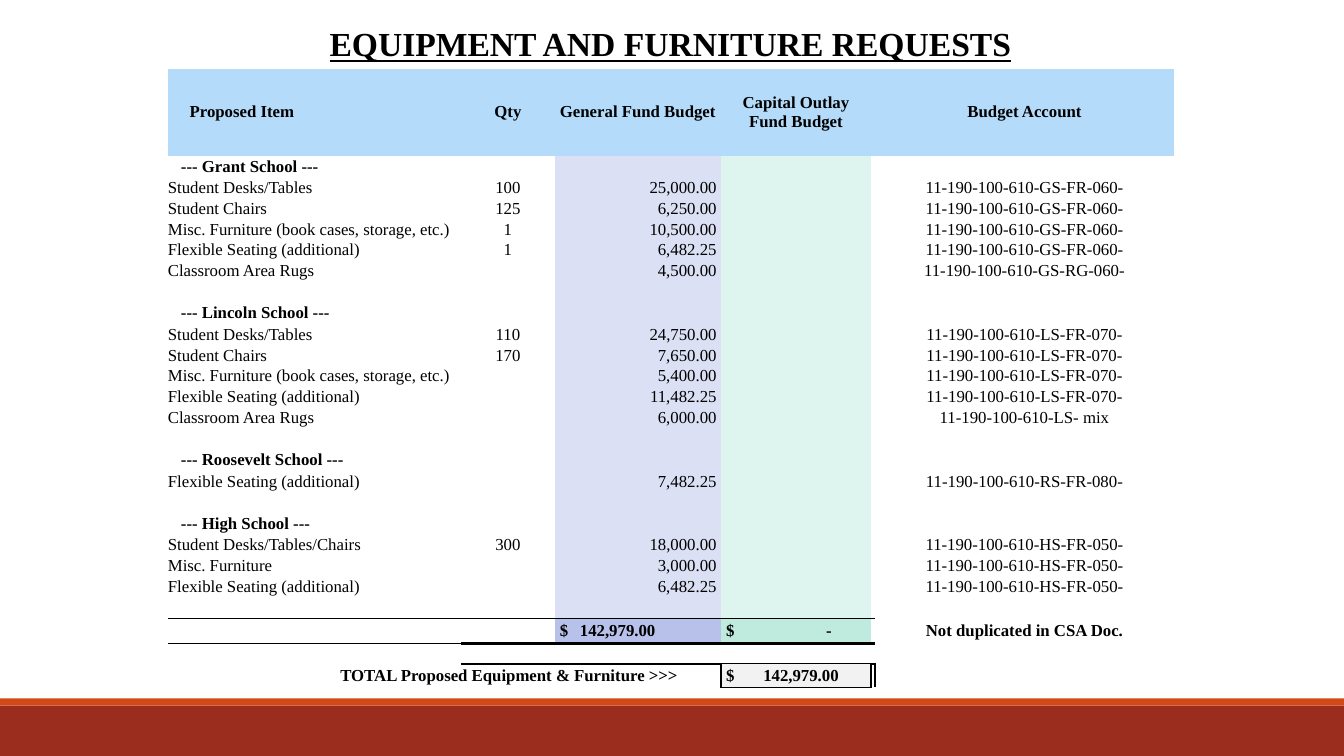
from lxml import etree
from pptx import Presentation
from pptx.dml.color import RGBColor
from pptx.enum.shapes import MSO_SHAPE
from pptx.enum.text import MSO_ANCHOR, MSO_AUTO_SIZE, PP_ALIGN
from pptx.oxml.ns import qn
from pptx.util import Cm, Pt

LEFT, MID, RIGHT = PP_ALIGN.LEFT, PP_ALIGN.CENTER, PP_ALIGN.RIGHT
RECT, MIDDLE, TOP = MSO_SHAPE.RECTANGLE, MSO_ANCHOR.MIDDLE, MSO_ANCHOR.TOP
FIXED = MSO_AUTO_SIZE.NONE

# Content
TITLE = "EQUIPMENT AND FURNITURE REQUESTS"
HEADS = ["Proposed Item", "Qty", "General Fund Budget",
         "Capital Outlay Fund Budget", "", "Budget Account"]
DESKS, CHAIRS = "Student Desks/Tables", "Student Chairs"
MISC = "Misc. Furniture (book cases, storage, etc.)"
FLEX, RUGS = "Flexible Seating (additional)", "Classroom Area Rugs"
CODE = "11-190-100-610-"
SCHOOLS = [
    ("Grant", [
        (DESKS, "100", "25,000.00", "GS-FR-060-"),
        (CHAIRS, "125", "6,250.00", "GS-FR-060-"),
        (MISC, "1", "10,500.00", "GS-FR-060-"),
        (FLEX, "1", "6,482.25", "GS-FR-060-"),
        (RUGS, "", "4,500.00", "GS-RG-060-")]),
    ("Lincoln", [
        (DESKS, "110", "24,750.00", "LS-FR-070-"),
        (CHAIRS, "170", "7,650.00", "LS-FR-070-"),
        (MISC, "", "5,400.00", "LS-FR-070-"),
        (FLEX, "", "11,482.25", "LS-FR-070-"),
        (RUGS, "", "6,000.00", "LS- mix")]),
    ("Roosevelt", [
        (FLEX, "", "7,482.25", "RS-FR-080-")]),
    ("High", [
        ("Student Desks/Tables/Chairs", "300", "18,000.00", "HS-FR-050-"),
        ("Misc. Furniture", "", "3,000.00", "HS-FR-050-"),
        (FLEX, "", "6,482.25", "HS-FR-050-")]),
]
SUMS = ["", "", "$\t142,979.00", "$\t-", "", "Not duplicated in CSA Doc."]
GRAND = ["TOTAL Proposed Equipment & Furniture >>>", "", "",
         "$\t142,979.00", "", ""]
BLANK = [""] * 6

# Format: row heights and column widths in cm, fills by column
HIGH = {"head": 2.18, "school": 0.55, "item": 0.525, "blank": 0.525,
        "sum": 0.64, "gap": 0.51, "grand": 0.59}
WIDE = [7.39, 2.36, 4.19, 3.78, 0.1, 7.54]
ALIGN = [LEFT, MID, RIGHT, LEFT, LEFT, MID]
BODY = {2: "DBE0F4", 3: "DEF5EF"}
FILLS = {"head": dict.fromkeys(range(6), "B4DCFA"), "school": BODY,
         "item": BODY, "blank": BODY, "sum": {2: "B8C1E9", 3: "BEEBDE"},
         "gap": {}, "grand": {3: "F2F2F2"}}
TABS = {("sum", 2): 2.41, ("sum", 3): 2.66, ("grand", 3): 2.84}
BARS = [(17.78, 1.27, "9B2D1F"), (17.6, 0.18, "D34817")]


def color(code):
    return RGBColor.from_string(code)


def write(frame, text, size=12, bold=False, line=False, align=LEFT, tab=None):
    para = frame.paragraphs[0]
    para.alignment = align
    if tab:
        stops = etree.SubElement(para._p.get_or_add_pPr(), qn("a:tabLst"))
        etree.SubElement(stops, qn("a:tab"), pos=str(Cm(tab)), algn="r")
    if not text:
        etree.SubElement(para._p, qn("a:endParaRPr"), sz=str(size * 100))
        return
    run = para.add_run()
    run.text = text
    font = run.font
    font.name, font.size = "Times New Roman", Pt(size)
    font.bold, font.underline = bold, line
    font.color.rgb = color("000000")


def border(cell, edges):
    props = cell._tc.get_or_add_tcPr()
    for side in "LRTB":
        if side in edges:
            line = etree.SubElement(props, qn("a:ln" + side),
                                    w=str(Pt(edges[side])))
            fill = etree.SubElement(line, qn("a:solidFill"))
            etree.SubElement(fill, qn("a:srgbClr"), val="000000")


def margins(kind, col):
    """Left and right cell margins in cm."""
    if kind == "head":
        return (0.55, 0) if col == 0 else (0.1, 0.1) if col == 3 else (0, 0)
    if kind == "school" and col == 0:
        return 0.33, 0
    if kind == "grand" and col == 0:
        return 0, 1.08
    if (kind, col) in TABS:
        return 0.13, 0
    return (0, 0.11) if col == 2 else (0, 0)


def edges(kind, col, last):
    """Border widths in points by side."""
    if kind == "blank" and last and col < 5:
        return {"B": 0.5}
    if kind == "sum" and col < 5:
        return {"T": 0.5, "B": 2} if col else {"T": 0.5}
    if kind == "gap" and 0 < col < 5:
        return {"T": 2, "B": 1} if col == 3 else {"T": 2}
    if kind == "grand":
        return {0: {"R": 1}, 3: dict.fromkeys("LRTB", 1),
                4: {"L": 1}}.get(col, {})
    return {}


# Rows in order
rows = [("head", HEADS)]
for name, items in SCHOOLS:
    rows.append(("school", [f"--- {name} School ---"] + BLANK[1:]))
    rows += [("item", [item, qty, cost, "", "", CODE + code])
             for item, qty, cost, code in items]
    rows.append(("blank", BLANK))
end = len(rows) - 1
rows += [("sum", SUMS), ("gap", BLANK), ("grand", GRAND)]

# Slide
deck = Presentation()
deck.slide_width, deck.slide_height = Cm(33.87), Cm(19.05)
slide = deck.slides.add_slide(deck.slide_layouts[5])

# Footer bars
for top, high, code in BARS:
    bar = slide.shapes.add_shape(RECT, 0, Cm(top), deck.slide_width, Cm(high))
    bar.shadow.inherit = False
    bar.fill.solid()
    bar.fill.fore_color.rgb = color(code)
    bar.line.fill.background()

# Budget table
frame = slide.shapes.add_table(len(rows), len(WIDE), Cm(4.23), Cm(1.74),
                               Cm(sum(WIDE)),
                               Cm(sum(HIGH[kind] for kind, _ in rows)))
table = frame.table
table.first_row = table.horz_banding = False
table._tbl.tblPr.find(qn("a:tableStyleId")).text = \
    "{2D5ABB26-0587-4C30-8999-92F81FD0307C}"
for col, wide in enumerate(WIDE):
    table.columns[col].width = Cm(wide)
for row, (kind, texts) in enumerate(rows):
    table.rows[row].height = Cm(HIGH[kind])
    for col, text in enumerate(texts):
        cell = table.cell(row, col)
        cell.margin_top = cell.margin_bottom = 0
        cell.margin_left, cell.margin_right = map(Cm, margins(kind, col))
        cell.vertical_anchor = MIDDLE
        border(cell, edges(kind, col, row == end))
        if col in FILLS[kind]:
            cell.fill.solid()
            cell.fill.fore_color.rgb = color(FILLS[kind][col])
        else:
            cell.fill.background()
        align = ALIGN[col]
        if kind == "head" and col:
            align = MID
        elif kind == "grand" and col == 0:
            align = RIGHT
        elif (kind, col) in TABS:
            align = LEFT
        write(cell.text_frame, text, bold=kind != "item", align=align,
              tab=TABS.get((kind, col)))
table.cell(len(rows) - 1, 0).merge(table.cell(len(rows) - 1, 2))

# Title
title = slide.shapes.title
title.left, title.top, title.width, title.height = map(
    Cm, (8.05, 0.46, 17.78, 1.27))
title.text_frame.auto_size = FIXED
title.text_frame.word_wrap = True
title.text_frame.vertical_anchor = TOP
write(title.text_frame, TITLE, size=24, bold=True, line=True)

deck.save("out.pptx")
